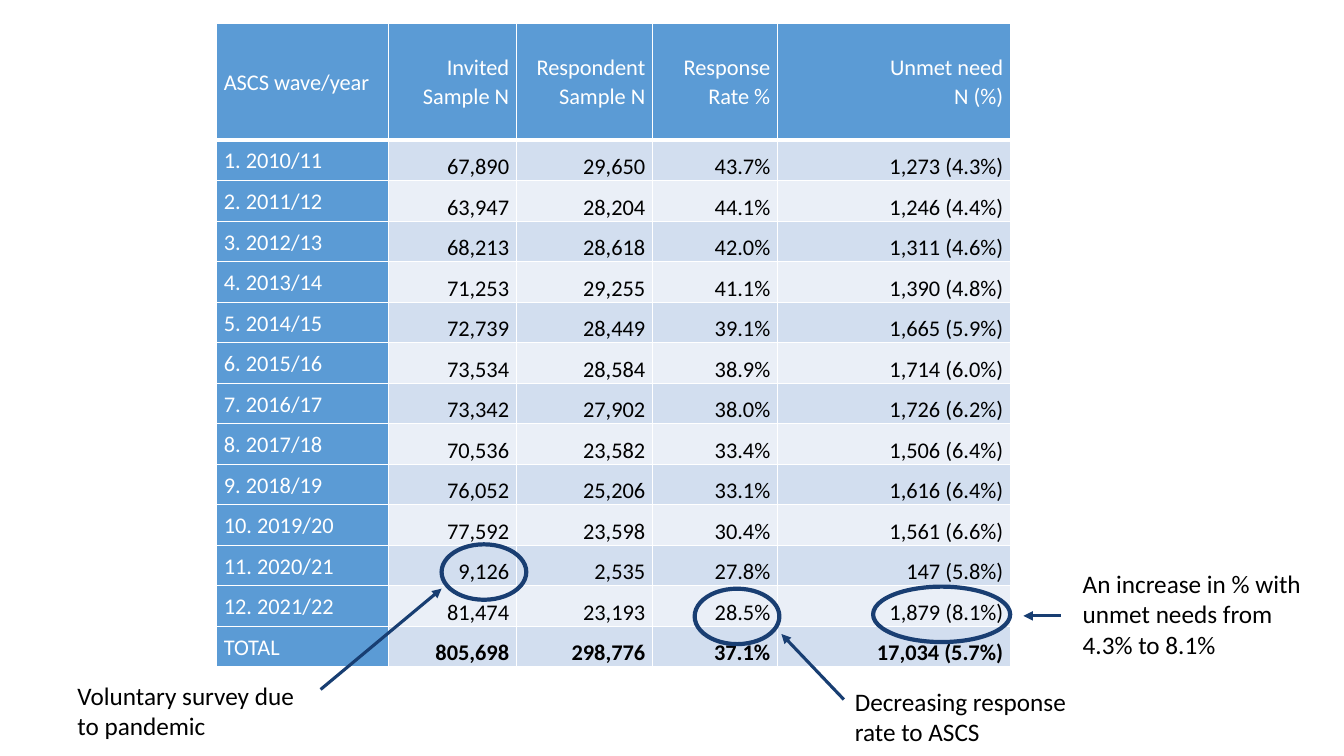
import dataclasses

import lxml.etree
import pptx
import pptx.dml.color
import pptx.enum.shapes
import pptx.enum.text
import pptx.oxml.ns
import pptx.util

Inches = pptx.util.Inches
Pt = pptx.util.Pt
RGBColor = pptx.dml.color.RGBColor
Align = pptx.enum.text.PP_ALIGN
Anchor = pptx.enum.text.MSO_ANCHOR
qn = pptx.oxml.ns.qn

WHITE = RGBColor(0xFF, 0xFF, 0xFF)
BLACK = RGBColor(0, 0, 0)
BLUE = RGBColor(0x5B, 0x9B, 0xD5)
BANDS = (RGBColor(0xD2, 0xDE, 0xEF), RGBColor(0xEA, 0xEF, 0xF7))
RING = RGBColor(0x19, 0x3E, 0x72)
ARROW = RGBColor(0x18, 0x3E, 0x72)
FONT = "Calibri"

WIDTHS = (1.7, 1.27, 1.35, 1.24, 2.31)
LEFT, TOP, HEIGHT, HEAD = 2.15, 0.23, 6.39, 1.16

ROWS = (
    ("ASCS wave/year", "Invited Sample N", "Respondent Sample N", "Response Rate %", "Unmet need\nN (%)"),
    ("1. 2010/11", "67,890", "29,650", "43.7%", "1,273 (4.3%)"),
    ("2. 2011/12", "63,947", "28,204", "44.1%", "1,246 (4.4%)"),
    ("3. 2012/13", "68,213", "28,618", "42.0%", "1,311 (4.6%)"),
    ("4. 2013/14", "71,253", "29,255", "41.1%", "1,390 (4.8%)"),
    ("5. 2014/15", "72,739", "28,449", "39.1%", "1,665 (5.9%)"),
    ("6. 2015/16", "73,534", "28,584", "38.9%", "1,714 (6.0%)"),
    ("7. 2016/17", "73,342", "27,902", "38.0%", "1,726 (6.2%)"),
    ("8. 2017/18", "70,536", "23,582", "33.4%", "1,506 (6.4%)"),
    ("9. 2018/19", "76,052", "25,206", "33.1%", "1,616 (6.4%)"),
    ("10. 2019/20", "77,592", "23,598", "30.4%", "1,561 (6.6%)"),
    ("11. 2020/21", "9,126", "2,535", "27.8%", "147 (5.8%)"),
    ("12. 2021/22", "81,474", "23,193", "28.5%", "1,879 (8.1%)"),
    ("TOTAL", "805,698", "298,776", "37.1%", "17,034 (5.7%)"),
)


@dataclasses.dataclass(frozen=True)
class Note:
    text: str
    left: float
    top: float
    height: float


@dataclasses.dataclass(frozen=True)
class Ring:
    left: float
    top: float
    width: float


@dataclasses.dataclass(frozen=True)
class Arrow:
    start: tuple[float, float]
    end: tuple[float, float]


NOTES = (
    Note("An increase in % with unmet needs from 4.3% to 8.1%", 10.64, 5.59, 1.01),
    Note("Decreasing response rate to ASCS", 8.38, 6.76, 0.71),
    Note("Voluntary survey due to pandemic", 0.67, 6.7, 0.71),
)
RINGS = (Ring(6.89, 5.84, 0.84), Ring(4.38, 5.4, 0.84), Ring(8.66, 5.82, 1.36))
ARROWS = (
    Arrow((8.37, 6.94), (7.75, 6.29)),
    Arrow((3.18, 6.84), (4.38, 5.84)),
    Arrow((10.52, 6.11), (10.15, 6.11)),
)


def style_text(frame, size: float, color: RGBColor, bold: bool = False) -> None:
    for para in frame.paragraphs:
        for run in para.runs:
            run.font.name = FONT
            run.font.size = Pt(size)
            run.font.bold = bold
            run.font.color.rgb = color


def add_edges(cell, base: float) -> None:
    props = cell._tc.get_or_add_tcPr()
    for side, width in (("L", 1), ("R", 1), ("T", 1), ("B", base)):
        edge = lxml.etree.SubElement(props, qn(f"a:ln{side}"), w=str(Pt(width)))
        fill = lxml.etree.SubElement(edge, qn("a:solidFill"))
        lxml.etree.SubElement(fill, qn("a:srgbClr"), val=str(WHITE))


def fill_cell(cell, text: str, row: int, col: int) -> None:
    label = row == 0 or col == 0
    cell.text = text
    cell.margin_left = cell.margin_right = Inches(0.07)
    cell.margin_top = cell.margin_bottom = 0
    cell.vertical_anchor = Anchor.MIDDLE if label else Anchor.BOTTOM
    for para in cell.text_frame.paragraphs:
        para.line_spacing = 1.07
        para.alignment = Align.RIGHT if col else Align.LEFT
    total = row == len(ROWS) - 1 and not label
    style_text(cell.text_frame, 16, WHITE if label else BLACK, total)
    add_edges(cell, 1 if row else 3)
    cell.fill.solid()
    cell.fill.fore_color.rgb = BLUE if label else BANDS[(row - 1) % 2]


def add_grid(slide) -> None:
    table = slide.shapes.add_table(
        len(ROWS), len(WIDTHS), Inches(LEFT), Inches(TOP), Inches(sum(WIDTHS)), Inches(HEIGHT)
    ).table
    table.first_row = False
    table.horz_banding = False
    for col, width in enumerate(WIDTHS):
        table.columns[col].width = Inches(width)
    pitch = (HEIGHT - HEAD) / (len(ROWS) - 1)
    for row, texts in enumerate(ROWS):
        table.rows[row].height = Inches(pitch if row else HEAD)
        for col, text in enumerate(texts):
            fill_cell(table.cell(row, col), text, row, col)


def add_note(slide, note: Note) -> None:
    box = slide.shapes.add_textbox(Inches(note.left), Inches(note.top), Inches(2.6), Inches(note.height))
    frame = box.text_frame
    frame.word_wrap = True
    frame.auto_size = pptx.enum.text.MSO_AUTO_SIZE.SHAPE_TO_FIT_TEXT
    frame.text = note.text
    style_text(frame, 18, BLACK)


def add_ring(slide, ring: Ring) -> None:
    shape = slide.shapes.add_shape(
        pptx.enum.shapes.MSO_SHAPE.OVAL,
        Inches(ring.left), Inches(ring.top), Inches(ring.width), Inches(0.55),
    )
    shape.shadow.inherit = False
    shape.fill.background()
    shape.line.color.rgb = RING
    shape.line.width = Pt(3)


def add_arrow(slide, arrow: Arrow) -> None:
    ends = [Inches(value) for value in (*arrow.start, *arrow.end)]
    line = slide.shapes.add_connector(pptx.enum.shapes.MSO_CONNECTOR.STRAIGHT, *ends)
    line.line.color.rgb = ARROW
    line.line.width = Pt(2.25)
    lxml.etree.SubElement(line.line._get_or_add_ln(), qn("a:tailEnd"), type="triangle")
    lxml.etree.SubElement(line._element.spPr, qn("a:effectLst"))


def main() -> None:
    deck = pptx.Presentation()
    deck.slide_width = Inches(13.33)
    deck.slide_height = Inches(7.5)
    slide = deck.slides.add_slide(deck.slide_layouts[6])
    add_grid(slide)
    for note in NOTES:
        add_note(slide, note)
    for ring in RINGS:
        add_ring(slide, ring)
    for arrow in ARROWS:
        add_arrow(slide, arrow)
    deck.save("out.pptx")


if __name__ == "__main__":
    main()
